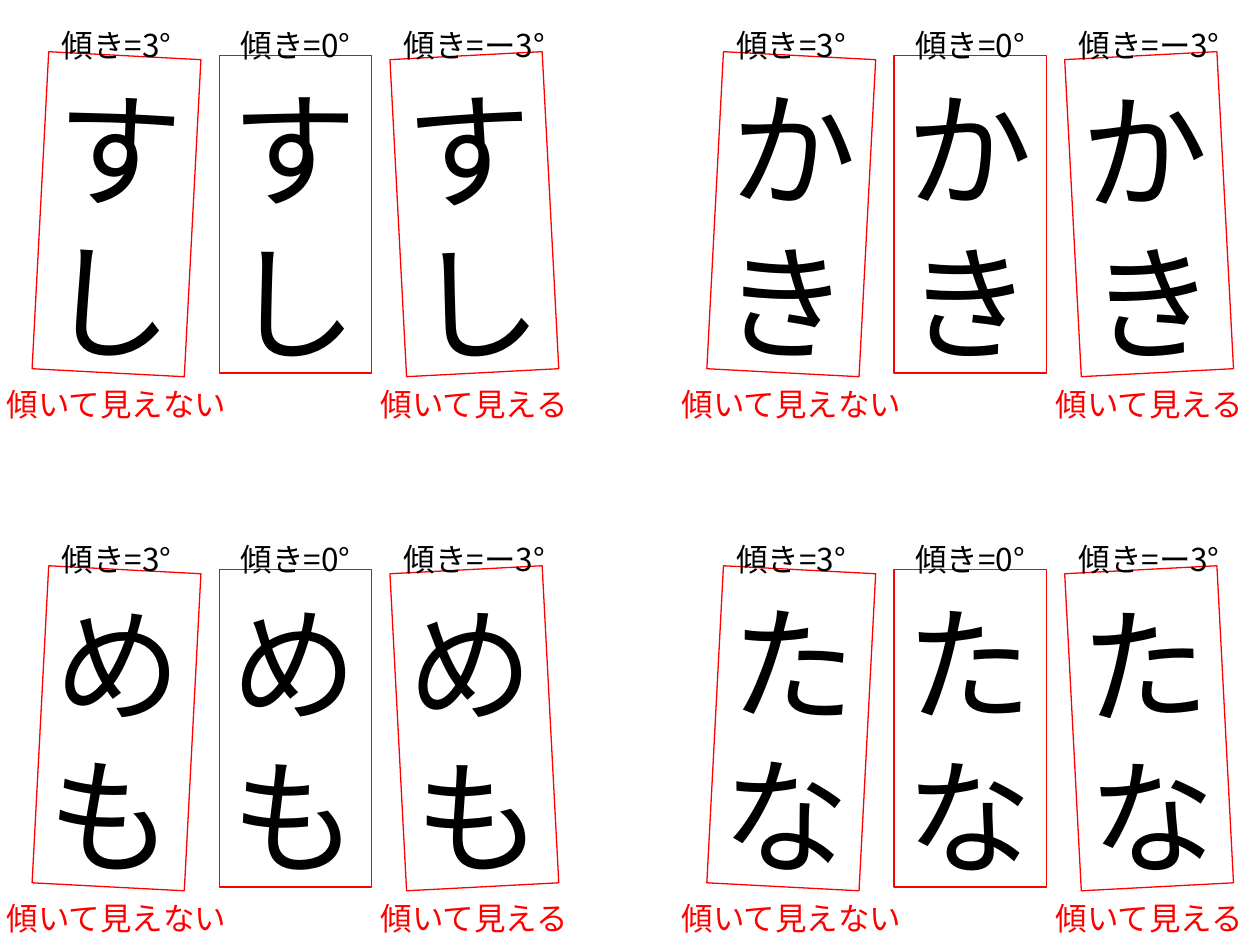
"""Build a slide of four kana panels, each shown at three tilts."""
import pptx
import pptx.dml.color
import pptx.enum.shapes
import pptx.enum.text
import pptx.oxml
import pptx.oxml.ns
import pptx.util

COLORS = {"ink": "000000", "accent": "FF0000"}
FONT = "Noto Sans CJK JP"
ALIGN = pptx.enum.text.PP_ALIGN
Inches = pptx.util.Inches

deck = pptx.Presentation()
deck.slide_width, deck.slide_height = Inches(10), Inches(7.5)
page = deck.slides.add_slide(deck.slide_layouts[6])


def write(box, text, size=18, color="ink", align=ALIGN.CENTER, wrap=True):
    frame = box.text_frame
    frame.word_wrap = wrap
    frame.vertical_anchor = pptx.enum.text.MSO_ANCHOR.TOP
    frame.margin_top = Inches(0.05 + size / 1000)
    frame.margin_bottom = 0
    frame.text = text
    for para in frame.paragraphs:
        para.alignment = align
        para.line_spacing = pptx.util.Pt(round(size * 1.21))
        for span in para.runs:
            span.font.name = FONT
            span.font.size = pptx.util.Pt(size)
            span.font.color.rgb = pptx.dml.color.RGBColor.from_string(COLORS[color])
            east_asian = pptx.oxml.parse_xml(
                f'<a:ea {pptx.oxml.ns.nsdecls("a")} typeface="{FONT}"/>')
            span.font._element.find(pptx.oxml.ns.qn("a:latin")).addnext(east_asian)


panels = [["す\nし", "か\nき"], ["め\nも", "た\nな"]]
tilts = [(3, "傾き=3°", "傾いて見えない"),
         (0, "傾き=0°", None),
         (-3, "傾き=ー3°", "傾いて見える")]
panel_width, panel_height, column_step = 5.355, 4.08, 1.42
card_width, card_height = 1.21, 2.52
label_width, verdict_width = 2.47, 2.05

for row, words in enumerate(panels):
    for column, word in enumerate(words):
        top = row * panel_height
        for index, (angle, label, verdict) in enumerate(tilts):
            center = 0.925 + column * panel_width + index * column_step

            card = page.shapes.add_shape(
                pptx.enum.shapes.MSO_SHAPE.RECTANGLE,
                Inches(center - card_width / 2), Inches(top + 0.44),
                Inches(card_width), Inches(card_height))
            card.rotation = angle
            card.shadow.inherit = False
            card.fill.background()
            card.line.color.rgb = pptx.dml.color.RGBColor.from_string(COLORS["accent"])
            card.line.width = pptx.util.Pt(0.75)
            write(card, word, size=72, align=ALIGN.LEFT, wrap=False)

            heading = page.shapes.add_textbox(
                Inches(center - label_width / 2), Inches(top + 0.13),
                Inches(label_width), Inches(0.39))
            write(heading, label)

            if verdict:
                caption = page.shapes.add_textbox(
                    Inches(center - verdict_width / 2), Inches(top + 2.98),
                    Inches(verdict_width), Inches(1.02))
                write(caption, verdict, color="accent")

deck.save("out.pptx")
